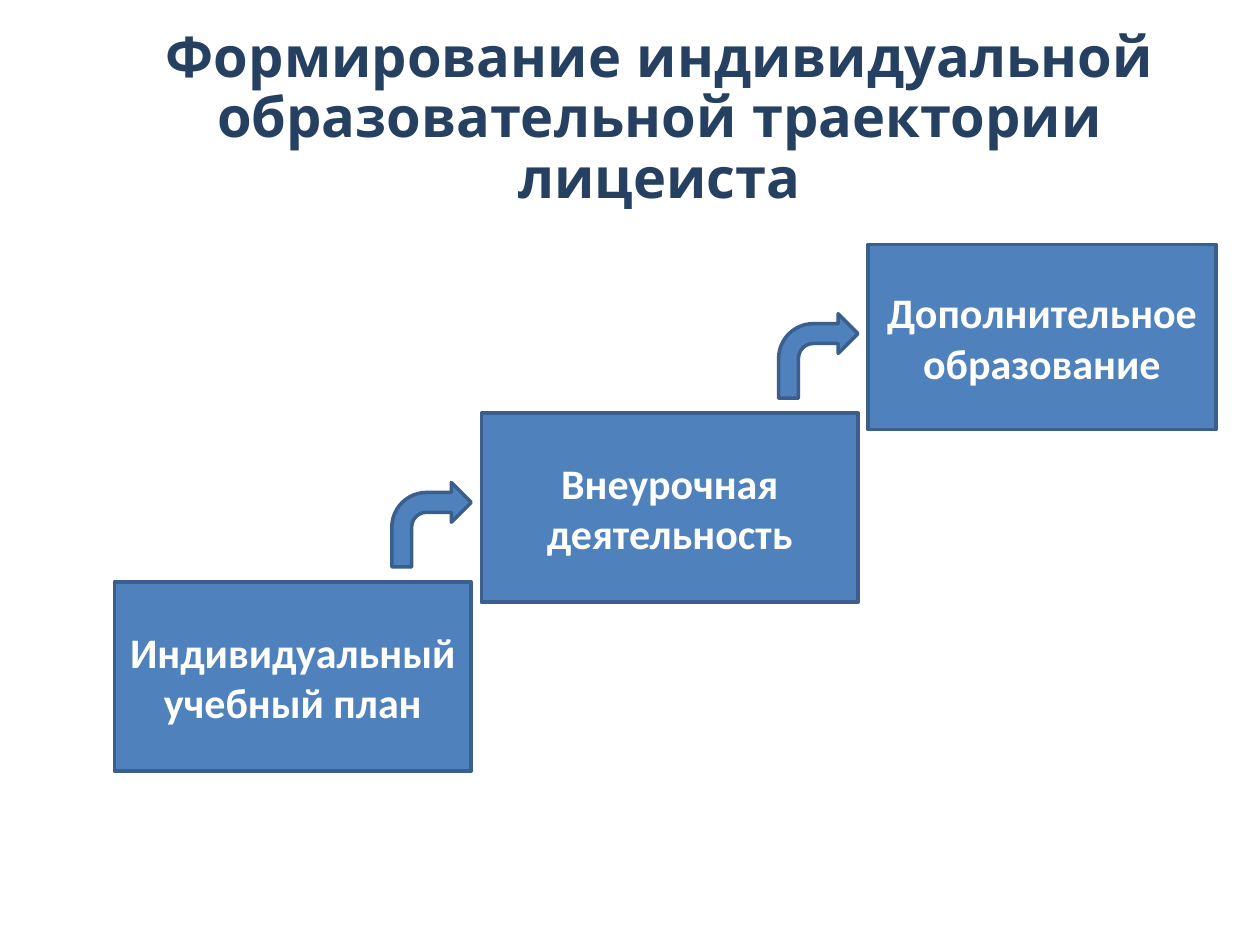
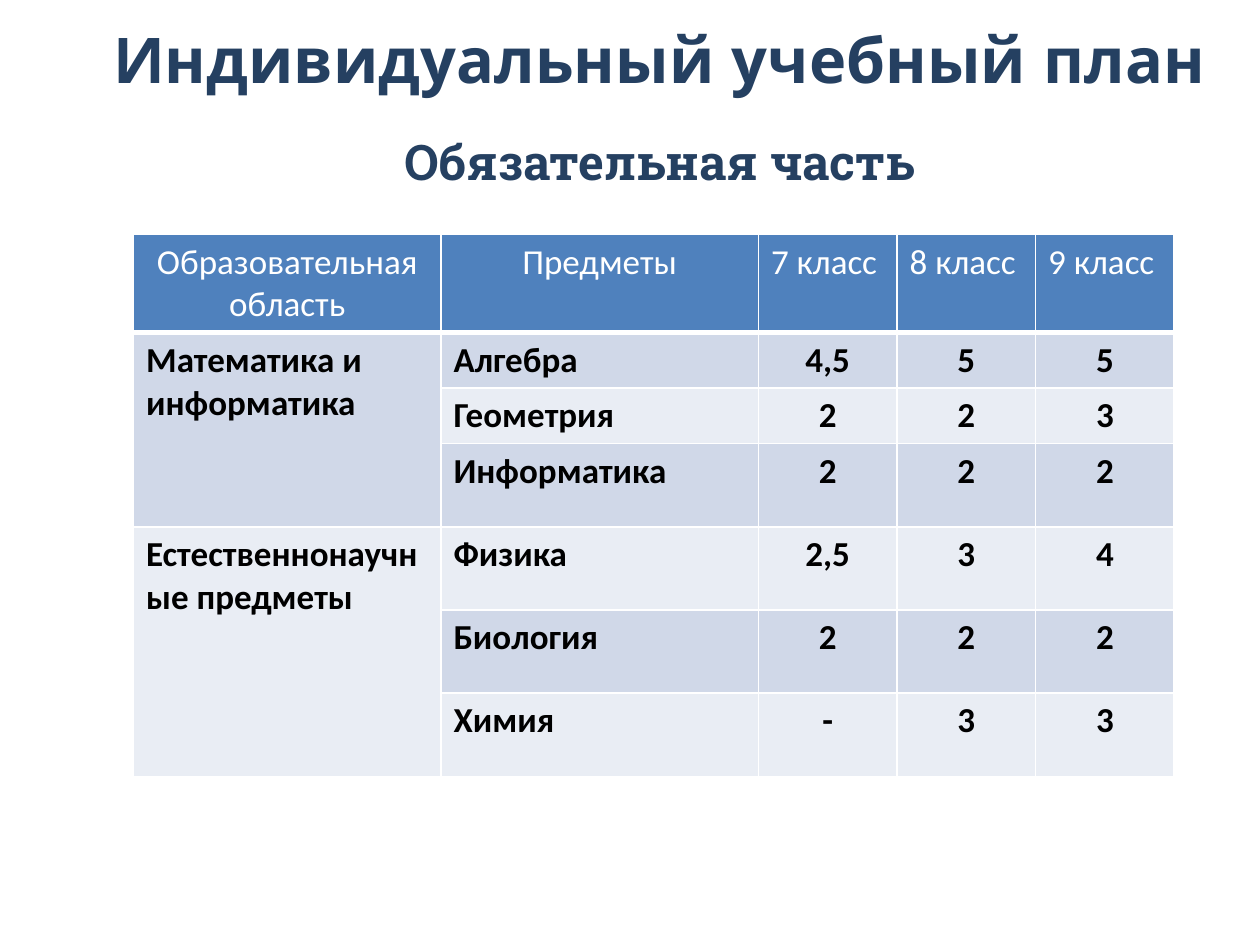
"""Build two slides on the individual learning path of a lyceum student."""
from lxml import etree
from pptx import Presentation
from pptx.dml.color import RGBColor
from pptx.enum.shapes import MSO_SHAPE
from pptx.enum.text import MSO_ANCHOR, MSO_AUTO_SIZE, PP_ALIGN
from pptx.oxml.ns import qn
from pptx.util import Inches, Pt

RECTANGLE, BENT_ARROW = MSO_SHAPE.RECTANGLE, MSO_SHAPE.BENT_ARROW
LEFT, CENTER = PP_ALIGN.LEFT, PP_ALIGN.CENTER
TOP, MIDDLE = MSO_ANCHOR.TOP, MSO_ANCHOR.MIDDLE
NO_AUTOFIT = MSO_AUTO_SIZE.NONE

TITLE_AND_BODY, TITLE_ONLY = 1, 5
COLUMNS, ROWS = 100, 75
NAVY, BLUE, OUTLINE = "254061", "4F81BD", "3A5F8C"
WHITE, BLACK = "FFFFFF", "000000"
BANDS = "D0D8E8", "E9EDF4"
TITLE_FONT, SUBTITLE_FONT, BODY_FONT = "Quicksand", "Roboto Slab", "Calibri"
CONTENT_LEFT, CONTENT_WIDTH = 7.8, 89.1

STEPS = [
    ("Индивидуальный учебный план", 28.3, 15),
    ("Внеурочная деятельность", 29.9, 15),
    ("Дополнительное образование", 27.6, 14.7),
]
STEP_LEFT, STEP_TOP, STEP_RISE, STEP_GAP = 9.1, 46.2, 13.4, 0.8
ARROW_WIDTH, ARROW_HEIGHT, ARROW_RISE = 6.3, 6.7, 7.9

HEADERS = ["Образовательная область", "Предметы", "7 класс", "8 класс", "9 класс"]
AREAS = {
    "Математика и информатика": [
        ("Алгебра", "4,5", "5", "5"),
        ("Геометрия", "2", "2", "3"),
        ("Информатика", "2", "2", "2"),
    ],
    "Естественнонаучные предметы": [
        ("Физика", "2,5", "3", "4"),
        ("Биология", "2", "2", "2"),
        ("Химия", "-", "3", "3"),
    ],
}
TABLE_COLUMNS = [24.4, 25.2, 11, 11, 11]
TABLE_ROWS = [7.7, 4.4, 4.4, 6.6, 6.6, 6.6, 6.6]


def color(value):
    return RGBColor.from_string(value)


class Deck:
    def __init__(self):
        self.presentation = Presentation()
        self.presentation.slide_width = Inches(10)
        self.presentation.slide_height = Inches(7.5)
        self.slide = None

    def across(self, columns):
        return round(self.presentation.slide_width * columns / COLUMNS)

    def down(self, rows):
        return round(self.presentation.slide_height * rows / ROWS)

    def box(self, left, top, width, height):
        return self.across(left), self.down(top), self.across(width), self.down(height)

    def set_text(self, frame, text, font, size, fill, bold=True, align=CENTER):
        frame.word_wrap = True
        paragraph = frame.paragraphs[0]
        paragraph.text = text
        paragraph.alignment = align
        paragraph.font.name = font
        paragraph.font.size = Pt(size)
        paragraph.font.bold = bold
        paragraph.font.color.rgb = color(fill)
        return paragraph

    def place(self, placeholder, top, height):
        area = self.box(CONTENT_LEFT, top, CONTENT_WIDTH, height)
        placeholder.left, placeholder.top, placeholder.width, placeholder.height = area
        frame = placeholder.text_frame
        frame.auto_size = NO_AUTOFIT
        frame.vertical_anchor = TOP
        return frame

    def add_slide(self, layout, title, size, height):
        layouts = self.presentation.slide_layouts
        self.slide = self.presentation.slides.add_slide(layouts[layout])
        frame = self.place(self.slide.shapes.title, 1.6, height)
        frame.margin_top = Inches(0.07)
        paragraph = self.set_text(frame, title, TITLE_FONT, size, NAVY)
        paragraph.line_spacing = 0.9

    def subtitle(self, text, top, height):
        frame = self.place(self.slide.placeholders[1], top, height)
        properties = frame.paragraphs[0]._p.get_or_add_pPr()
        properties.set("marL", "0")
        properties.set("indent", "0")
        etree.SubElement(properties, qn("a:buNone"))
        paragraph = self.set_text(frame, text, SUBTITLE_FONT, 28, NAVY)
        paragraph.space_before = Pt(0)

    def shape(self, kind, left, top, width, height, text=None):
        shape = self.slide.shapes.add_shape(kind, *self.box(left, top, width, height))
        shape.shadow.inherit = False
        shape.fill.solid()
        shape.fill.fore_color.rgb = color(BLUE)
        shape.line.color.rgb = color(OUTLINE)
        shape.line.width = Pt(2)
        if text:
            shape.text_frame.vertical_anchor = MIDDLE
            self.set_text(shape.text_frame, text, BODY_FONT, 24, WHITE)

    def borders(self, cell, bottom):
        properties = cell._tc.get_or_add_tcPr()
        for side, width in zip("LRTB", (1, 1, 1, bottom)):
            line = etree.SubElement(properties, qn(f"a:ln{side}"), w=str(Pt(width)))
            fill = etree.SubElement(line, qn("a:solidFill"))
            etree.SubElement(fill, qn("a:srgbClr"), val=WHITE)

    def cell(self, cell, text, fill, header=False, align=CENTER):
        self.borders(cell, 3 if header else 1)
        cell.fill.solid()
        cell.fill.fore_color.rgb = color(fill)
        if text:
            ink = WHITE if header else BLACK
            self.set_text(cell.text_frame, text, BODY_FONT, 20, ink, not header, align)

    def table(self, left, top, widths, heights):
        area = self.box(left, top, sum(widths), sum(heights))
        frame = self.slide.shapes.add_table(len(heights), len(widths), *area)
        table = frame.table
        table.horz_banding = False
        for column, width in zip(table.columns, widths):
            column.width = self.across(width)
        for row, height in zip(table.rows, heights):
            row.height = self.down(height)
        return table


def build_steps(deck):
    deck.add_slide(
        TITLE_ONLY,
        "Формирование индивидуальной образовательной траектории лицеиста",
        32,
        16.3,
    )
    left, top = STEP_LEFT, STEP_TOP
    for index, (text, width, height) in enumerate(STEPS, start=1):
        deck.shape(RECTANGLE, left, top, width, height, text)
        right = left + width
        if index < len(STEPS):
            arrow_left, arrow_top = right - ARROW_WIDTH, top - ARROW_RISE
            deck.shape(BENT_ARROW, arrow_left, arrow_top, ARROW_WIDTH, ARROW_HEIGHT)
        left, top = right + STEP_GAP, top - STEP_RISE


def build_plan(deck):
    deck.add_slide(TITLE_AND_BODY, "Индивидуальный учебный план", 36, 8.4)
    deck.subtitle("Обязательная часть", 9.9, 57.1)
    table = deck.table(10.6, 18.6, TABLE_COLUMNS, TABLE_ROWS)
    for column, text in enumerate(HEADERS):
        align = CENTER if column < 2 else LEFT
        deck.cell(table.cell(0, column), text, BLUE, header=True, align=align)
    row = 1
    for area, subjects in AREAS.items():
        first_row = row
        area_fill = BANDS[(first_row - 1) % 2]
        for subject in subjects:
            label = area if row == first_row else None
            deck.cell(table.cell(row, 0), label, area_fill, align=LEFT)
            for column, text in enumerate(subject, start=1):
                align = LEFT if column == 1 else CENTER
                fill = BANDS[(row - 1) % 2]
                deck.cell(table.cell(row, column), text, fill, align=align)
            row += 1
        table.cell(first_row, 0).merge(table.cell(row - 1, 0))


def main():
    deck = Deck()
    build_steps(deck)
    build_plan(deck)
    deck.presentation.save("out.pptx")


if __name__ == "__main__":
    main()
